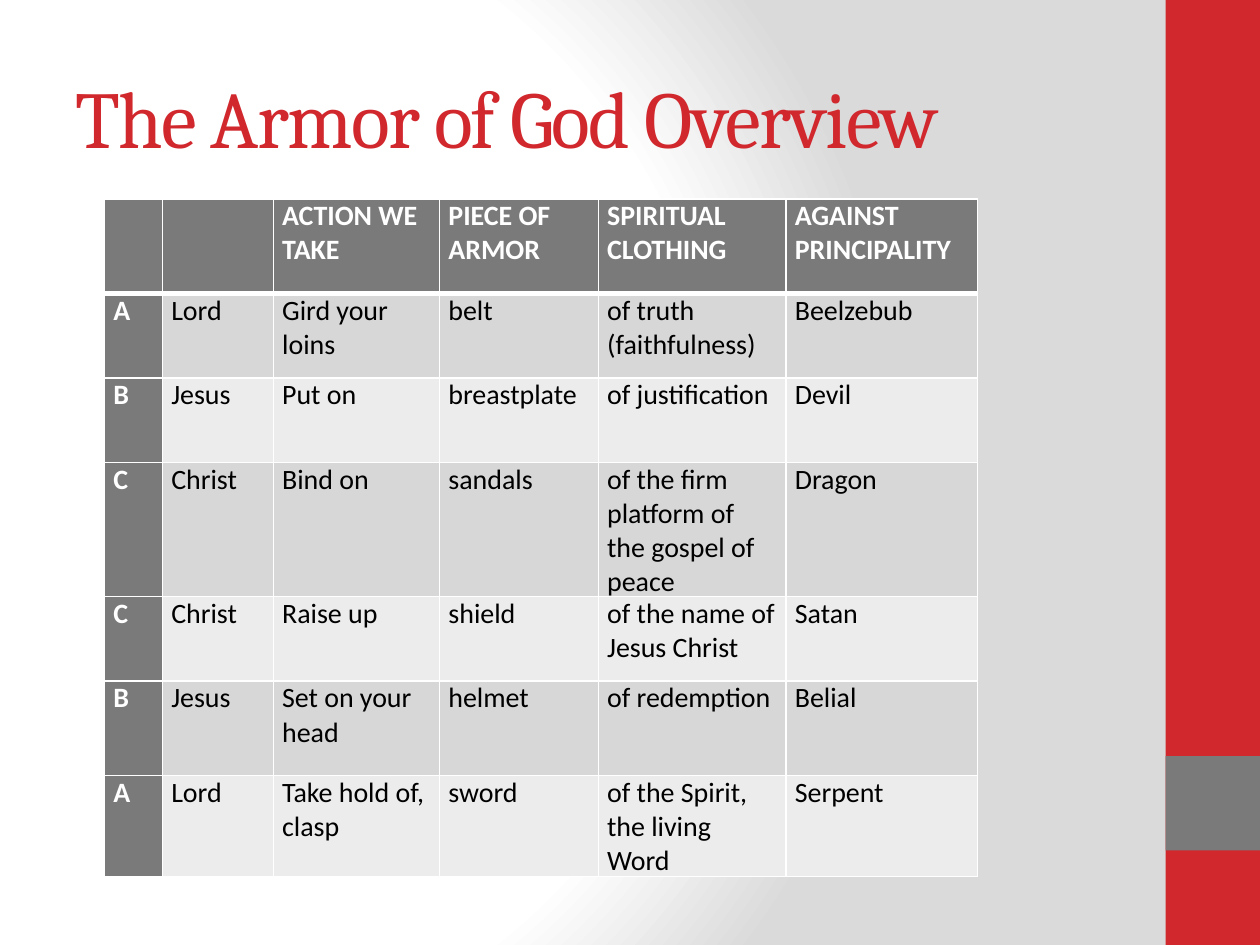
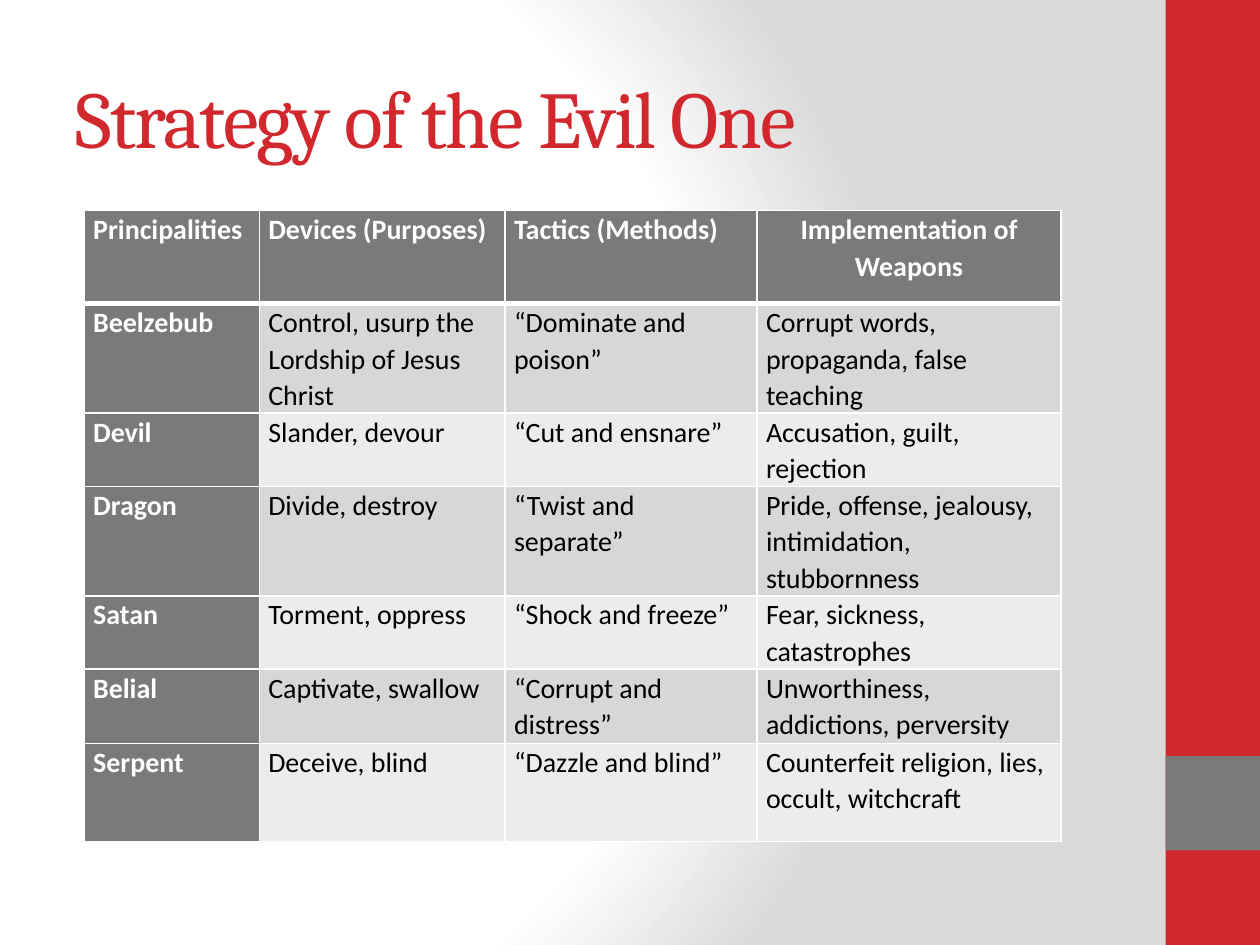
from lxml.etree import SubElement
from pptx import Presentation
from pptx.dml.color import RGBColor
from pptx.enum.shapes import MSO_SHAPE as SHAPE
from pptx.enum.text import MSO_ANCHOR as ANCHOR, PP_ALIGN as ALIGN
from pptx.oxml.ns import qn
from pptx.util import Inches, Pt

RED, GRAY, WHITE, BLACK = "D1282E", "7A7A7A", "FFFFFF", "000000"
STRIPES = ("D7D7D7", "ECECEC")
BACKDROP = ((0, WHITE), (75, WHITE), (100, "DADADA"))
TITLE_FONT, BODY_FONT = "Cambria", "Calibri"

ARMOR = [
    ("", "", "ACTION WE TAKE", "PIECE OF ARMOR", "SPIRITUAL CLOTHING", "AGAINST PRINCIPALITY"),
    ("A", "Lord", "Gird your loins", "belt", "of truth (faithfulness)", "Beelzebub"),
    ("B", "Jesus", "Put on", "breastplate", "of justification", "Devil"),
    ("C", "Christ", "Bind on", "sandals", "of the firm platform of the gospel of peace", "Dragon"),
    ("C", "Christ", "Raise up", "shield", "of the name of Jesus Christ", "Satan"),
    ("B", "Jesus", "Set on your head", "helmet", "of redemption", "Belial"),
    ("A", "Lord", "Take hold of, clasp", "sword", "of the Spirit, the living Word", "Serpent"),
]
STRATEGY = [
    ("Principalities", "Devices (Purposes)", "Tactics (Methods)", "Implementation of Weapons"),
    ("Beelzebub", "Control, usurp the Lordship of Jesus Christ", "“Dominate and poison”",
     "Corrupt words, propaganda, false teaching"),
    ("Devil", "Slander, devour", "“Cut and ensnare”", "Accusation, guilt, rejection"),
    ("Dragon", "Divide, destroy", "“Twist and separate”",
     "Pride, offense, jealousy, intimidation, stubbornness"),
    ("Satan", "Torment, oppress", "“Shock and freeze”", "Fear, sickness, catastrophes"),
    ("Belial", "Captivate, swallow", "“Corrupt and distress”",
     "Unworthiness, addictions, perversity"),
    ("Serpent", "Deceive, blind", "“Dazzle and blind”",
     "Counterfeit religion, lies, occult, witchcraft"),
]


def color(value):
    """Turn a hex string into a colour."""
    return RGBColor.from_string(value)


def style_font(font, name, size, fill, bold=False):
    """Set the face, size, colour and weight of a font."""
    font.name, font.size, font.bold = name, Pt(size), bold
    font.color.rgb = color(fill)


def paint_backdrop(page):
    """Give the page its radial white-to-gray gradient."""
    page.background.fill.gradient()
    gradient = page.background._cSld.find(".//" + qn("a:gradFill"))
    gradient.clear()
    gradient.set("rotWithShape", "1")
    stops = SubElement(gradient, qn("a:gsLst"))
    for position, fill in BACKDROP:
        stop = SubElement(stops, qn("a:gs"), pos=str(position * 1000))
        SubElement(stop, qn("a:srgbClr"), val=fill)
    circle = SubElement(gradient, qn("a:path"), {"path": "circle"})
    SubElement(circle, qn("a:fillToRect"), l="20000", t="50000", r="100000", b="50000")


def add_band(page, top, height, fill):
    """Draw a plain block in the right-hand strip."""
    band = page.shapes.add_shape(
        SHAPE.RECTANGLE, Inches(9.25), Inches(top), Inches(0.75), Inches(height))
    band.shadow.inherit = False
    band.fill.solid()
    band.fill.fore_color.rgb = color(fill)
    band.line.fill.background()


def add_title(page, title):
    """Write the page title."""
    box = page.shapes.add_textbox(Inches(0.5), Inches(0.3), Inches(8.33), Inches(1.25))
    frame = box.text_frame
    frame.word_wrap = True
    frame.vertical_anchor = ANCHOR.MIDDLE
    frame.text = title
    span = frame.paragraphs[0].runs[0]
    style_font(span.font, TITLE_FONT, 46, RED)
    span.font._element.set("spc", "-100")


def add_page(deck, title):
    """Add a page with the shared backdrop, bands and title."""
    page = deck.slides.add_slide(deck.slide_layouts[6])
    paint_backdrop(page)
    add_band(page, 0, 7.5, RED)
    add_band(page, 6, 0.75, GRAY)
    add_title(page, title)
    return page


def set_borders(cell, top, bottom):
    """Rule a cell in white, with top and bottom widths in points."""
    properties = cell._tc.get_or_add_tcPr()
    for side, width in (("L", 1), ("R", 1), ("T", top), ("B", bottom)):
        line = SubElement(properties, qn("a:ln" + side), w=str(Pt(width)))
        fill = SubElement(line, qn("a:solidFill"))
        SubElement(fill, qn("a:srgbClr"), val=WHITE)


def fill_cell(cell, text, row, column, spacing):
    """Write and style one cell according to its place in the table."""
    heading = row == 0 or column == 0
    set_borders(cell, 3 if row == 1 else 1, 3 if row == 0 else 1)
    cell.fill.solid()
    cell.fill.fore_color.rgb = color(GRAY if heading else STRIPES[(row - 1) % 2])
    cell.margin_left = cell.margin_right = Inches(0.07)
    cell.margin_top = cell.margin_bottom = 0
    cell.text_frame.text = text
    para = cell.text_frame.paragraphs[0]
    para.line_spacing = spacing
    for span in para.runs:
        style_font(span.font, BODY_FONT, 16, WHITE if heading else BLACK, heading)


def add_grid(page, left, top, widths, heights, rows, spacing=1.0):
    """Add a table with a header row, a header column and striped rows."""
    table = page.shapes.add_table(
        len(rows), len(widths), Inches(left), Inches(top),
        Inches(sum(widths)), Inches(sum(heights))).table
    for column, width in zip(table.columns, widths):
        column.width = Inches(width)
    for line, height in zip(table.rows, heights):
        line.height = Inches(height)
    for row, texts in enumerate(rows):
        for column, text in enumerate(texts):
            fill_cell(table.cell(row, column), text, row, column, spacing)
    return table


def main():
    """Build and save the deck."""
    deck = Presentation()
    deck.slide_width, deck.slide_height = Inches(10), Inches(7.5)

    page = add_page(deck, "The Armor of God Overview")
    add_grid(page, 0.83, 1.58, (0.46, 0.88, 1.32, 1.26, 1.49, 1.52),
             (0.75, 0.67, 0.67, 0.75, 0.67, 0.75, 0.75), ARMOR)

    page = add_page(deck, "Strategy of the Evil One")
    table = add_grid(page, 0.67, 1.67, (1.39, 1.95, 2, 2.41),
                     (0.74, 0.87, 0.58, 0.87, 0.58, 0.59, 0.78), STRATEGY, 1.07)
    table.cell(0, 3).text_frame.paragraphs[0].alignment = ALIGN.CENTER

    deck.save("out.pptx")


if __name__ == "__main__":
    main()
